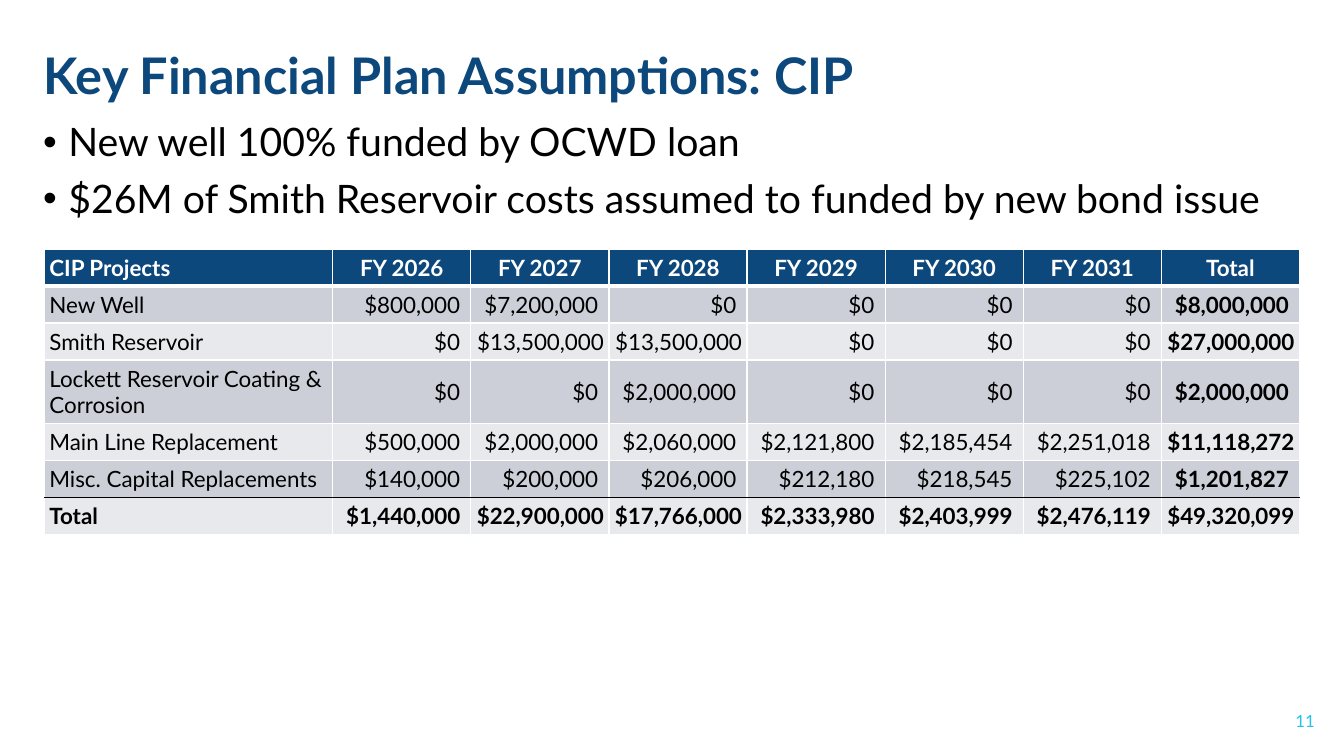
from lxml import etree
from pptx import Presentation
from pptx.dml.color import RGBColor
from pptx.enum.text import MSO_ANCHOR, PP_ALIGN
from pptx.oxml.ns import qn
from pptx.util import Inches, Pt

LEFT, CENTER, RIGHT = PP_ALIGN.LEFT, PP_ALIGN.CENTER, PP_ALIGN.RIGHT
TOP, MIDDLE, BOTTOM = MSO_ANCHOR.TOP, MSO_ANCHOR.MIDDLE, MSO_ANCHOR.BOTTOM

TITLE = "Key Financial Plan Assumptions: CIP"
BULLETS = [
    "New well 100% funded by OCWD loan",
    "$26M of Smith Reservoir costs assumed to funded by new bond issue",
]
PAGE_NUMBER = "11"
YEARS = range(2026, 2032)
HEADER = ["CIP Projects", *(f"FY {year}" for year in YEARS), "Total"]
PROJECTS = [
    ("New Well", 800000, 7200000, 0, 0, 0, 0, 8000000),
    ("Smith Reservoir", 0, 13500000, 13500000, 0, 0, 0, 27000000),
    ("Lockett Reservoir Coating & Corrosion", 0, 0, 2000000, 0, 0, 0, 2000000),
    ("Main Line Replacement", 500000, 2000000, 2060000, 2121800, 2185454, 2251018, 11118272),
    ("Misc. Capital Replacements", 140000, 200000, 206000, 212180, 218545, 225102, 1201827),
    ("Total", 1440000, 22900000, 17766000, 2333980, 2403999, 2476119, 49320099),
]

FONT = "Lato"
NAVY, CYAN, BLACK, WHITE = "0C487C", "24C2EB", "000000", "FFFFFF"
BANDS = ["CCCFD7", "E7E9EC"]
MARGIN, TEXT_WIDTH = 0.33, 12.8
TABLE_LEFT, TABLE_TOP, TABLE_HEIGHT = 0.44, 2.47, 2.83
NAME_WIDTH, VALUE_WIDTH, ROW_HEIGHT = 2.86, 1.37, 0.34
CELL_INSET = Inches(0.05)


def color(value):
    return RGBColor.from_string(value)


def style(para, size, ink, bold=False, align=LEFT):
    para.alignment = align
    para.font.name = FONT
    para.font.size = Pt(size)
    para.font.bold = bold
    para.font.color.rgb = color(ink)


def add_text_box(page, left, top, width, height, anchor):
    box = page.shapes.add_textbox(*map(Inches, (left, top, width, height)))
    frame = box.text_frame
    frame.word_wrap = True
    frame.vertical_anchor = anchor
    return frame


def add_bullet(para):
    properties = para._p.get_or_add_pPr()
    properties.set("marL", str(Inches(0.25)))
    properties.set("indent", str(-Inches(0.25)))
    etree.SubElement(properties, qn("a:buFont"), typeface="Arial")
    etree.SubElement(properties, qn("a:buChar"), char="•")


def set_borders(cell, above, below):
    properties = cell._tc.get_or_add_tcPr()
    side = (WHITE, 1)
    edges = zip(("L", "R", "T", "B"), (side, side, above, below))
    for position, (edge, (ink, width)) in enumerate(edges):
        line = etree.Element(qn(f"a:ln{edge}"), w=str(Pt(width)))
        fill = etree.SubElement(line, qn("a:solidFill"))
        etree.SubElement(fill, qn("a:srgbClr"), val=ink)
        properties.insert(position, line)


def add_projects_table(page):
    rows = [HEADER, *PROJECTS]
    last_row, last_column = len(rows) - 1, len(HEADER) - 1
    width = NAME_WIDTH + last_column * VALUE_WIDTH
    shape = page.shapes.add_table(
        len(rows), len(HEADER),
        *map(Inches, (TABLE_LEFT, TABLE_TOP, width, TABLE_HEIGHT)))
    table = shape.table
    table.horz_banding = False
    for index, column in enumerate(table.columns):
        column.width = Inches(VALUE_WIDTH if index else NAME_WIDTH)
    for row in table.rows:
        row.height = Inches(ROW_HEIGHT)
    shape.height = Inches(TABLE_HEIGHT)

    rules = [(WHITE, 1)] * (len(rows) + 1)
    rules[1] = (WHITE, 3)
    rules[last_row] = (BLACK, 1)
    for r, values in enumerate(rows):
        for c, value in enumerate(values):
            cell = table.cell(r, c)
            cell.margin_left = cell.margin_right = CELL_INSET
            cell.margin_top = cell.margin_bottom = CELL_INSET
            cell.vertical_anchor = MIDDLE
            cell.fill.solid()
            cell.fill.fore_color.rgb = color(BANDS[(r - 1) % 2] if r else NAVY)
            set_borders(cell, rules[r], rules[r + 1])
            para = cell.text_frame.paragraphs[0]
            para.text = value if isinstance(value, str) else f"${value:,} "
            align = LEFT if c == 0 else RIGHT if r else CENTER
            bold = r in (0, last_row) or c == last_column
            style(para, 16, BLACK if r else WHITE, bold, align)


def main():
    deck = Presentation()
    deck.slide_width, deck.slide_height = Inches(13.33), Inches(7.5)
    page = deck.slides.add_slide(deck.slide_layouts[6])

    title = add_text_box(page, MARGIN, 0.4, TEXT_WIDTH, 0.7, BOTTOM).paragraphs[0]
    title.text = TITLE
    title.line_spacing = 0.9
    style(title, 36, NAVY, bold=True)

    number = add_text_box(page, 10.14, 6.95, 3, 0.4, MIDDLE).paragraphs[0]
    number.text = PAGE_NUMBER
    style(number, 12, CYAN, align=RIGHT)

    body = add_text_box(page, MARGIN, 1.17, TEXT_WIDTH, 4.97, TOP)
    for index, text in enumerate(BULLETS):
        para = body.add_paragraph() if index else body.paragraphs[0]
        para.text = text
        add_bullet(para)
        para.line_spacing = 0.9
        if index:
            para.space_before = Pt(10)
        style(para, 28, BLACK)

    add_projects_table(page)
    deck.save("out.pptx")


if __name__ == "__main__":
    main()
